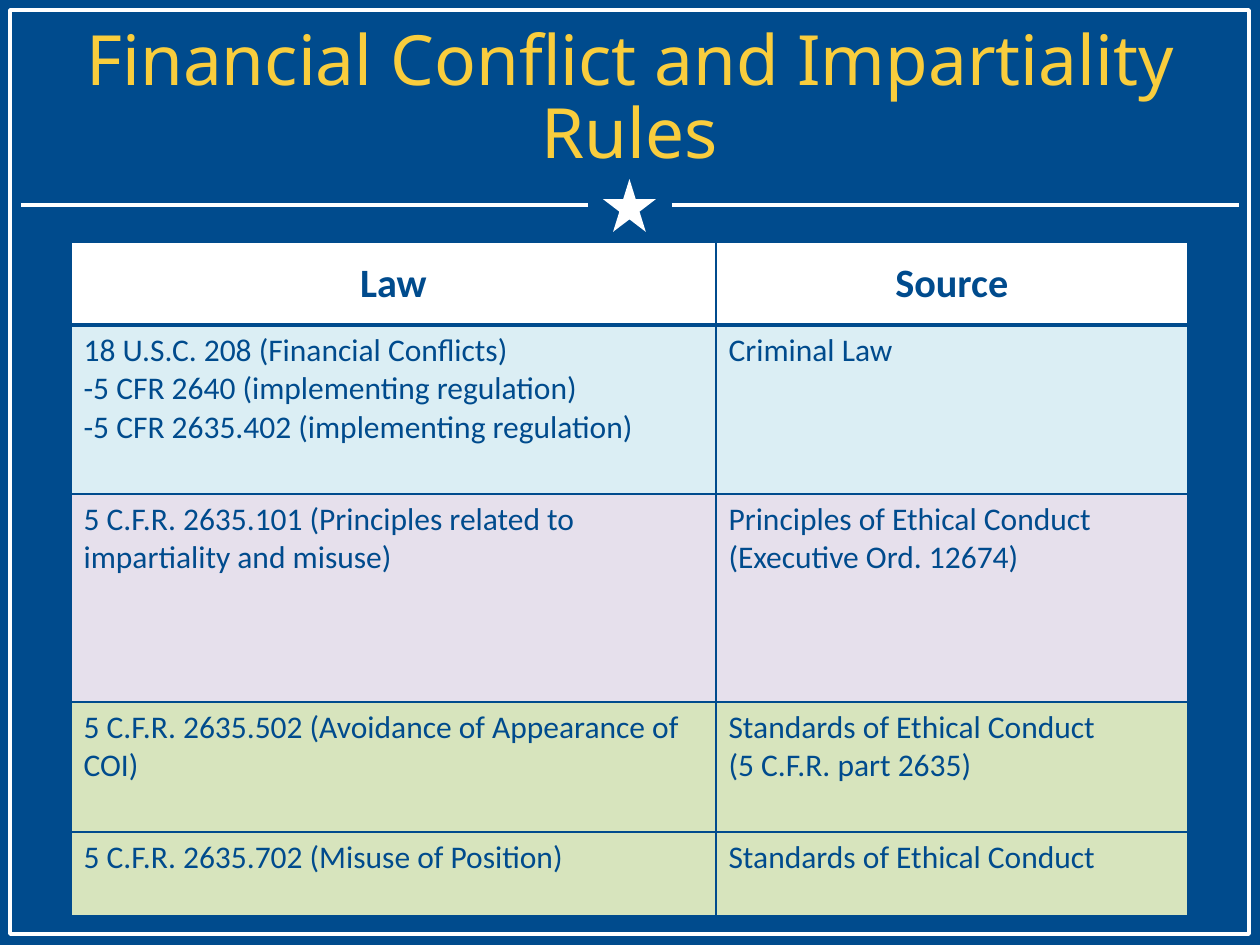
from lxml.etree import SubElement
from pptx import Presentation
from pptx.dml.color import RGBColor
from pptx.enum.shapes import MSO_CONNECTOR as Connector, MSO_SHAPE as Shape
from pptx.enum.text import MSO_ANCHOR as Anchor, MSO_AUTO_SIZE as AutoSize, PP_ALIGN as Align
from pptx.oxml.ns import qn
from pptx.util import Emu, Pt

WIDTH, HEIGHT = 1260, 945
NAVY, WHITE, GOLD = "004B8D", "FFFFFF", "F9CD3D"
COLUMNS = [645, 472]
RULES = [
    (83, WHITE, ["Law", "Source"]),
    (169, "DBEEF4", [
        "18 U.S.C. 208 (Financial Conflicts)\n"
        "-5 CFR 2640 (implementing regulation)\n"
        "-5 CFR 2635.402 (implementing regulation)",
        "Criminal Law"]),
    (208, "E6E0EC", [
        "5 C.F.R. 2635.101 (Principles related to impartiality and misuse)",
        "Principles of Ethical Conduct\n(Executive Ord. 12674)"]),
    (130, "D7E4BD", [
        "5 C.F.R. 2635.502 (Avoidance of Appearance of COI)",
        "Standards of Ethical Conduct\n(5 C.F.R. part 2635)"]),
    (84, "D7E4BD", [
        "5 C.F.R. 2635.702 (Misuse of Position)",
        "Standards of Ethical Conduct"]),
]


def px(length):
    return Emu(round(length * 914400 / 126))


def color(value):
    return RGBColor.from_string(value)


def paint(fill, value):
    fill.solid()
    fill.fore_color.rgb = color(value)


def write(frame, text, size, fill=NAVY, font="Calibri", bold=False,
          align=Align.LEFT, spacing=None):
    frame.text = text
    for paragraph in frame.paragraphs:
        paragraph.alignment = align
        paragraph.line_spacing = spacing
        for run in paragraph.runs:
            run.font.size = Pt(size)
            run.font.name = font
            run.font.bold = bold
            run.font.color.rgb = color(fill)


def outline(line):
    line.color.rgb = color(WHITE)
    line.width = Pt(2)


def add_border(slide, left, top, width, height):
    border = slide.shapes.add_shape(
        Shape.RECTANGLE, px(left), px(top), px(width), px(height))
    border.shadow.inherit = False
    border.fill.background()
    outline(border.line)


def add_star_divider(slide, left, top, width, height):
    middle = top + height // 2
    rule_width = 567
    for start in (left, left + width - rule_width):
        rule = slide.shapes.add_connector(
            Connector.STRAIGHT, px(start), px(middle), px(start + rule_width), px(middle))
        outline(rule.line)
        SubElement(rule.line._get_or_add_ln().getparent(), qn("a:effectLst"))
    star = slide.shapes.add_shape(
        Shape.STAR_5_POINT, px(left + (width - height) // 2), px(top), px(height), px(height))
    star.shadow.inherit = False
    paint(star.fill, WHITE)
    star.line.fill.background()


def add_title(slide, left, top, width, height):
    title = slide.shapes.title
    title.left, title.top, title.width, title.height = map(px, (left, top, width, height))
    frame = title.text_frame
    frame.word_wrap = True
    frame.auto_size = AutoSize.NONE
    frame.vertical_anchor = Anchor.MIDDLE
    write(frame, "Financial Conflict and Impartiality Rules", 39.6, fill=GOLD,
          font="Noto Sans", align=Align.CENTER, spacing=0.88)


def set_borders(cell, **widths):
    properties = cell._tc.get_or_add_tcPr()
    for position, (side, width) in enumerate(widths.items()):
        edge = properties.makeelement(qn(f"a:ln{side}"), {"w": str(Pt(width))})
        fill = SubElement(edge, qn("a:solidFill"))
        SubElement(fill, qn("a:srgbClr"), val=NAVY)
        properties.insert(position, edge)


def add_rules_table(slide, left, top):
    heights = [height for height, _, _ in RULES]
    table = slide.shapes.add_table(
        len(RULES), len(COLUMNS), px(left), px(top), px(sum(COLUMNS)), px(sum(heights))).table
    for column, width in zip(table.columns, COLUMNS):
        column.width = px(width)
    for index, (height, fill, texts) in enumerate(RULES):
        table.rows[index].height = px(height)
        header = index == 0
        for cell, text in zip(table.rows[index].cells, texts):
            paint(cell.fill, fill)
            cell.vertical_anchor = Anchor.MIDDLE if header else Anchor.TOP
            write(cell.text_frame, text, 23 if header else 18, bold=header,
                  align=Align.CENTER if header else Align.LEFT)
            set_borders(cell, L=1, R=1, T=3 if index == 1 else 1, B=3 if header else 1)


def main():
    deck = Presentation()
    deck.slide_width, deck.slide_height = px(WIDTH), px(HEIGHT)
    slide = deck.slides.add_slide(deck.slide_layouts[5])
    paint(slide.background.fill, NAVY)
    add_star_divider(slide, 21, 179, 1218, 53)
    add_border(slide, 10, 10, 1239, 924)
    add_title(slide, 63, 21, 1134, 158)
    add_rules_table(slide, 71, 242)
    deck.save("out.pptx")


if __name__ == "__main__":
    main()
